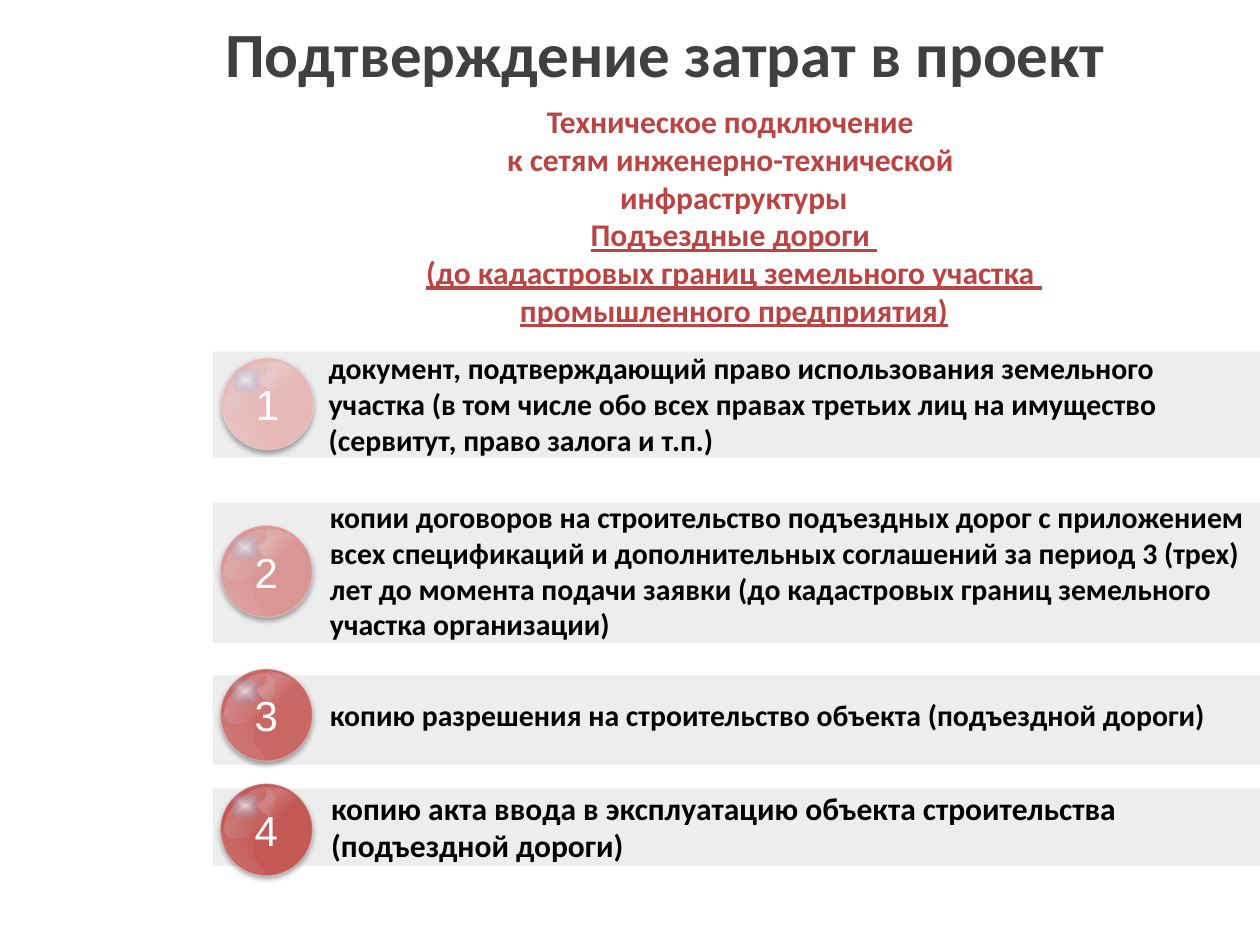
import math

import pptx
import pptx.dml.color
import pptx.enum.shapes
import pptx.enum.text
import pptx.oxml
import pptx.oxml.ns
import pptx.util

PX = 9144
OVAL = pptx.enum.shapes.MSO_SHAPE.OVAL
RECTANGLE = pptx.enum.shapes.MSO_SHAPE.RECTANGLE
CENTER = pptx.enum.text.PP_ALIGN.CENTER
LEFT = pptx.enum.text.PP_ALIGN.LEFT
MIDDLE = pptx.enum.text.MSO_ANCHOR.MIDDLE
TOP = pptx.enum.text.MSO_ANCHOR.TOP
GROW = pptx.enum.text.MSO_AUTO_SIZE.SHAPE_TO_FIT_TEXT
FIXED = pptx.enum.text.MSO_AUTO_SIZE.NONE
BALL = 73

UPPER_GLOSS = [
    (39, 3),
    (35, 3), (38, 9), (36, 12), (35, 15), (27, 15), (31, 20),
    (33, 26), (56, 34), (58, 42), (60, 49), (59, 49), (61, 49),
    (63, 48), (72, 43), (72, 37), (72, 30), (67, 17), (61, 12),
    (56, 6), (43, 3), (39, 3)]
LOWER_GLOSS = [
    (24, 20),
    (22, 21), (15, 25), (12, 27), (8, 30), (4, 32), (3, 36),
    (2, 39), (3, 45), (4, 49), (6, 53), (8, 57), (12, 60),
    (15, 63), (20, 67), (24, 68), (29, 70), (36, 73), (36, 71),
    (37, 69), (29, 61), (28, 57), (27, 52), (29, 47), (28, 42),
    (28, 36), (24, 28), (24, 25), (23, 21), (26, 20), (24, 20)]


def color(hex_code):
    return pptx.dml.color.RGBColor.from_string(hex_code)


def qn(tag):
    return pptx.oxml.ns.qn(tag)


def xml(markup):
    name = markup[1:].split(" ")[0].split(">")[0].rstrip("/")
    return pptx.oxml.parse_xml(
        markup.replace(name, f"{name} {pptx.oxml.ns.nsdecls('a')}", 1))


def fade(element, percent):
    for tint in element.iter(qn("a:srgbClr")):
        tint.append(xml(f'<a:alpha val="{percent * 1000}"/>'))


def linear(degrees):
    return f'<a:lin ang="{degrees * 60000}" scaled="0"/>'


def radial(kind, left, top, right, bottom):
    sides = zip("ltrb", (left, top, right, bottom))
    rect = " ".join(f'{side}="{value * 1000}"' for side, value in sides)
    return f'<a:path path="{kind}"><a:fillToRect {rect}/></a:path>'


def bend(shape):
    lines = list(shape._element.iter(qn("a:lnTo")))
    for first in range(0, len(lines), 3):
        curve = xml("<a:cubicBezTo/>")
        lines[first].addprevious(curve)
        for line in lines[first:first + 3]:
            curve.append(line[0])
            line.getparent().remove(line)


class Deck:
    heading_font = "Calibri"
    number_font = "Arial"
    accent = "B94441"

    def __init__(self, width, height):
        self.presentation = pptx.Presentation()
        self.presentation.slide_width = width * PX
        self.presentation.slide_height = height * PX
        self.slide = self.presentation.slides.add_slide(
            self.presentation.slide_layouts[6])

    def text(self, box, paragraphs, size, ink, align=LEFT, anchor=TOP, fit=GROW):
        frame = self.slide.shapes.add_textbox(*(v * PX for v in box)).text_frame
        frame.word_wrap = True
        frame.auto_size = fit
        frame.vertical_anchor = anchor
        for index, (lines, underline) in enumerate(paragraphs):
            paragraph = frame.add_paragraph() if index else frame.paragraphs[0]
            paragraph.alignment = align
            for number, line in enumerate(lines):
                if number:
                    paragraph.add_line_break()
                self.run(paragraph, line, size, ink, self.heading_font, True, underline)

    def run(self, paragraph, words, size, ink, face, bold=False, underline=None):
        run = paragraph.add_run()
        run.text = words
        run.font.size = pptx.util.Pt(size)
        run.font.name = face
        run.font.bold = bold
        run.font.underline = underline
        run.font.color.rgb = color(ink)

    def shape(self, shapes, kind, box, fill=None):
        shape = shapes.add_shape(kind, *(v * PX for v in box))
        shape.shadow.inherit = False
        shape.line.fill.background()
        if fill:
            shape.fill.solid()
            shape.fill.fore_color.rgb = color(fill)
        return shape

    def bar(self, box):
        bar = self.shape(self.slide.shapes, RECTANGLE, box, "A6A6A6")
        fade(bar._element.spPr, 20)

    def gradient(self, shape, stops, direction):
        marks = "".join(
            f'<a:gs pos="{pos * 1000}"><a:srgbClr val="{tint}">'
            f'<a:alpha val="{alpha * 1000}"/></a:srgbClr></a:gs>'
            for pos, tint, alpha in stops)
        shape.fill.background()
        properties = shape._element.spPr
        properties.replace(properties.find(qn("a:noFill")), xml(
            f'<a:gradFill rotWithShape="1"><a:gsLst>{marks}</a:gsLst>{direction}</a:gradFill>'))

    def sheen(self, shapes, box, stops, direction, rotation=0):
        sheen = self.shape(shapes, OVAL, box)
        sheen.rotation = rotation
        self.gradient(sheen, stops, direction)

    def gloss(self, shapes, left, top, outline, center, rotation, stops, direction):
        turn = math.radians(-rotation)
        points = []
        for x, y in outline:
            dx, dy = x - center[0], y - center[1]
            points.append((
                round((left + center[0] + dx * math.cos(turn) - dy * math.sin(turn)) * PX),
                round((top + center[1] + dx * math.sin(turn) + dy * math.cos(turn)) * PX)))
        builder = shapes.build_freeform(*points[0], scale=1.0)
        builder.add_line_segments(points[1:], close=True)
        gloss = builder.convert_to_shape()
        bend(gloss)
        gloss.shadow.inherit = False
        gloss.line.fill.background()
        gloss.rotation = rotation
        self.gradient(gloss, stops, direction)

    def ball(self, left, top, number, fill):
        shapes = self.slide.shapes.add_group_shape().shapes
        ball = self.shape(shapes, OVAL, (left, top, BALL, BALL), fill)
        ball.line.color.rgb = color("FFFFFF")
        ball.line.width = pptx.util.Pt(0.75)
        fade(ball.line._ln, 25)
        ball._element.spPr.find(qn("a:effectLst")).append(xml(
            '<a:outerShdw blurRad="40000" dist="23000" dir="5400000" rotWithShape="0">'
            '<a:srgbClr val="000000"><a:alpha val="35000"/></a:srgbClr></a:outerShdw>'))
        ball.text_frame.vertical_anchor = MIDDLE
        paragraph = ball.text_frame.paragraphs[0]
        paragraph.alignment = CENTER
        self.run(paragraph, number, 24, "FFFFFF", self.number_font)

        self.sheen(shapes, (left - 2, top + 10, 50, 27),
                   [(0, "FFFFFF", 33), (100, "B6B6B6", 0)], linear(90), 315)
        self.sheen(shapes, (left + 8, top + 7, 23, 21),
                   [(0, "FFFFFF", 65), (100, "67ABF5", 0)], radial("shape", 50, 50, 50, 50))
        self.gloss(shapes, left, top, UPPER_GLOSS, (49, 26), 90,
                   [(50, "FFFFFF", 0), (74, "FFFFFF", 19), (100, "FFFFFF", 0)],
                   radial("circle", 100, 100, 0, 0))
        self.gloss(shapes, left, top, LOWER_GLOSS, (20, 46), 97.3,
                   [(0, "FFFFFF", 0), (28, "FFFFFF", 0), (74, "FFFFFF", 11)], linear(45))
        self.sheen(shapes, (left + 28, top + 40, 50, 27),
                   [(0, "FFFFFF", 33), (20, "B6B6B6", 0)], linear(90), 135)


def main():
    deck = Deck(1000, 750)
    deck.text((169, 8, 823, 67), [(["Подтверждение затрат в проект"], None)],
              36, "404040", anchor=MIDDLE, fit=FIXED)
    deck.text((175, 76, 815, 192), [
        (["Техническое подключение ", "к сетям инженерно-технической ",
          "инфраструктуры"], None),
        (["Подъездные дороги ", "(до кадастровых границ земельного участка ",
          "промышленного предприятия)"], True),
    ], 18, deck.accent, CENTER)

    for top, height in ((626, 61), (536, 71), (399, 111), (279, 84)):
        deck.bar((169, top, 831, height))

    balls = ((176, 284, "E6B9B8"), (175, 417, "D99694"),
             (175, 531, "C96765"), (175, 622, "C35855"))
    for number, (left, top, fill) in enumerate(balls, 1):
        deck.ball(left, top, str(number), fill)

    documents = (
        ((251, 273, 749, 96), 17,
         "документ, подтверждающий право использования земельного участка "
         "(в том числе обо всех правах третьих лиц на имущество "
         "(сервитут, право залога и т.п.)"),
        ((252, 391, 749, 125), 17,
         "копии договоров на строительство подъездных дорог с приложением "
         "всех спецификаций и дополнительных соглашений за период 3 (трех) лет "
         "до момента подачи заявки (до кадастровых границ земельного участка организации)"),
        ((252, 548, 749, 39), 17,
         "копию разрешения на строительство объекта (подъездной дороги)"),
        ((253, 621, 752, 71), 18,
         "копию акта ввода в эксплуатацию объекта строительства (подъездной дороги)"),
    )
    for box, size, document in documents:
        deck.text(box, [([document], None)], size, "000000")
    deck.presentation.save("out.pptx")


if __name__ == "__main__":
    main()
